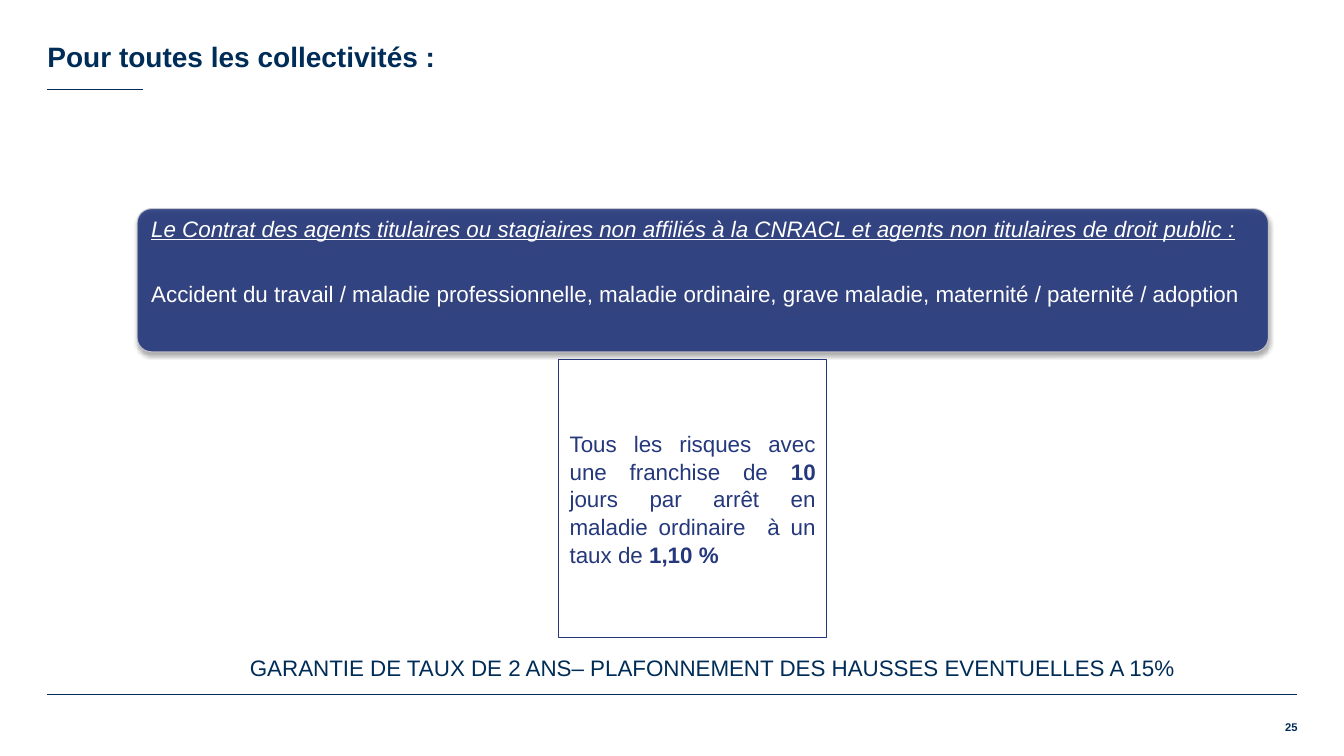
"""Build the slide on the rate offered to all local authorities."""
import pptx
import pptx.dml.color
import pptx.enum.shapes
import pptx.enum.text
import pptx.oxml
import pptx.oxml.ns
import pptx.util
from pptx.util import Inches

COLORS = {"navy": "002C58", "blue": "25387C", "white": "FFFFFF", "gray": "C7C8CD"}
ALIGN = pptx.enum.text.PP_ALIGN
ANCHOR = pptx.enum.text.MSO_ANCHOR
SHAPES = pptx.enum.shapes.MSO_SHAPE


def rgb(name):
    return pptx.dml.color.RGBColor.from_string(COLORS[name])


def add_run(paragraph, text, size, color, bold=False, italic=False, underline=False):
    run = paragraph.add_run()
    run.text = text
    font = run.font
    font.name = "Arial"
    font.size = pptx.util.Pt(size)
    font.bold, font.italic, font.underline = bold, italic, underline
    font.color.rgb = rgb(color)


presentation = pptx.Presentation()
presentation.slide_width = Inches(13.33)
presentation.slide_height = Inches(7.5)
slide = presentation.slides.add_slide(presentation.slide_layouts[5])

for right, height in ((12.86, 6.89), (1.42, 0.89)):
    rule = slide.shapes.add_connector(
        pptx.enum.shapes.MSO_CONNECTOR.STRAIGHT,
        Inches(0.47), Inches(height), Inches(right), Inches(height))
    rule.line.color.rgb = rgb("navy")
    rule.line.width = pptx.util.Pt(0.5)
    rule._element.spPr.append(pptx.oxml.parse_xml(
        f'<a:effectLst {pptx.oxml.ns.nsdecls("a")}/>'))

title = slide.shapes.title
title.left, title.top = Inches(0.47), Inches(0)
title.width, title.height = Inches(12.39), Inches(0.73)
title.text_frame.vertical_anchor = ANCHOR.BOTTOM
title.text_frame.paragraphs[0].alignment = ALIGN.LEFT
add_run(title.text_frame.paragraphs[0], "Pour toutes les collectivités :", 20, "navy", bold=True)

banner = slide.shapes.add_shape(
    SHAPES.ROUNDED_RECTANGLE, Inches(1.36), Inches(2.07), Inches(11.22), Inches(1.42))
banner.adjustments[0] = 0.1
banner.fill.solid()
banner.fill.fore_color.rgb = rgb("blue")
banner.line.color.rgb = rgb("gray")
banner.line.width = pptx.util.Pt(0.75)
for color in banner._element.spPr.iter(pptx.oxml.ns.qn("a:srgbClr")):
    color.append(pptx.oxml.parse_xml(
        f'<a:alpha {pptx.oxml.ns.nsdecls("a")} val="90000"/>'))
banner._element.spPr.append(pptx.oxml.parse_xml(
    f'<a:effectLst {pptx.oxml.ns.nsdecls("a")}>'
    '<a:outerShdw blurRad="39370" dist="22860" dir="5400000" rotWithShape="0">'
    '<a:srgbClr val="000000"><a:alpha val="35000"/></a:srgbClr>'
    '</a:outerShdw></a:effectLst>'))
banner.text_frame.word_wrap = True
banner.text_frame.vertical_anchor = ANCHOR.TOP
heading = banner.text_frame.paragraphs[0]
heading.space_after = pptx.util.Pt(29.4)
add_run(heading, "Le Contrat des agents titulaires ou stagiaires non affiliés à la CNRACL "
        "et agents non titulaires de droit public :", 16, "white", italic=True, underline=True)
risks = banner.text_frame.add_paragraph()
add_run(risks, "Accident du travail / maladie professionnelle, maladie ordinaire, "
        "grave maladie, maternité / paternité / adoption", 16, "white")
for paragraph in (heading, risks):
    paragraph.alignment = ALIGN.LEFT
    paragraph.line_spacing = 0.9

rate_box = slide.shapes.add_shape(
    SHAPES.RECTANGLE, Inches(5.54), Inches(3.57), Inches(2.66), Inches(2.75))
rate_box.shadow.inherit = False
rate_box.fill.background()
rate_box.line.color.rgb = rgb("blue")
rate_box.line.width = pptx.util.Pt(0.75)
rate_box.text_frame.word_wrap = True
rate_box.text_frame.vertical_anchor = ANCHOR.MIDDLE
rate = rate_box.text_frame.paragraphs[0]
rate.alignment = ALIGN.JUSTIFY
rate.line_spacing = 1.04
for text, bold in (
    ("Tous les risques avec une franchise de ", False),
    ("10 ", True),
    ("jours par arrêt en maladie ordinaire  à un taux de", False),
    (" 1,10 %", True),
):
    add_run(rate, text, 16, "blue", bold=bold)

page_number = slide.shapes.add_textbox(Inches(12.48), Inches(7.15), Inches(0.39), Inches(0.2))
page_number.text_frame.word_wrap = True
page_number.text_frame.paragraphs[0].alignment = ALIGN.RIGHT
add_run(page_number.text_frame.paragraphs[0], "25", 8, "navy", bold=True)

guarantee = slide.shapes.add_textbox(Inches(2.38), Inches(6.44), Inches(9.61), Inches(0.37))
guarantee.text_frame.word_wrap = True
add_run(guarantee.text_frame.paragraphs[0],
        "GARANTIE DE TAUX DE 2 ANS– PLAFONNEMENT DES HAUSSES EVENTUELLES A 15%", 16, "navy")

for shape, margin in ((title, 0), (rate_box, 0.11), (page_number, 0)):
    frame = shape.text_frame
    frame.margin_left = frame.margin_right = Inches(margin)
    frame.margin_top = frame.margin_bottom = Inches(margin)

presentation.save("out.pptx")
